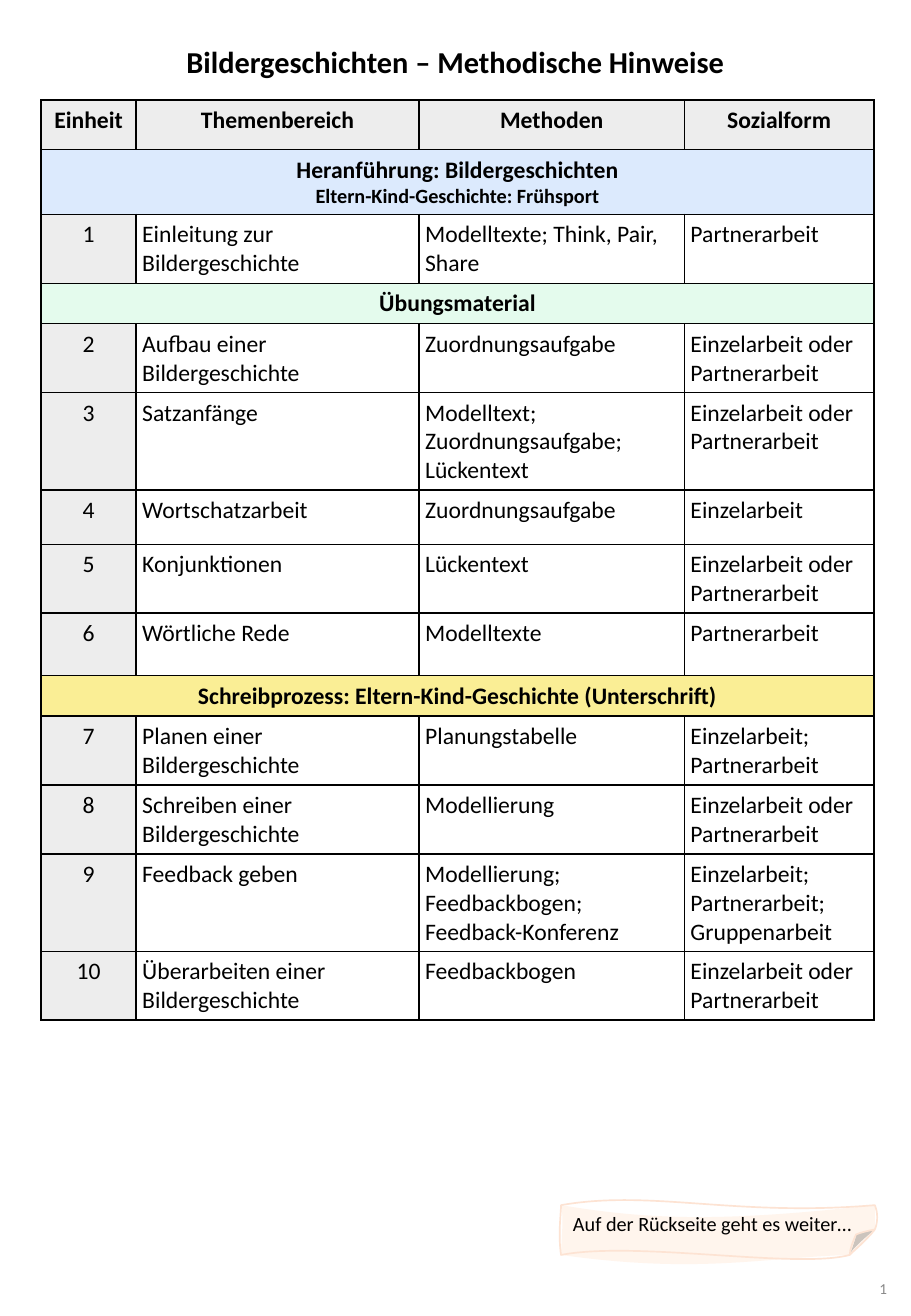
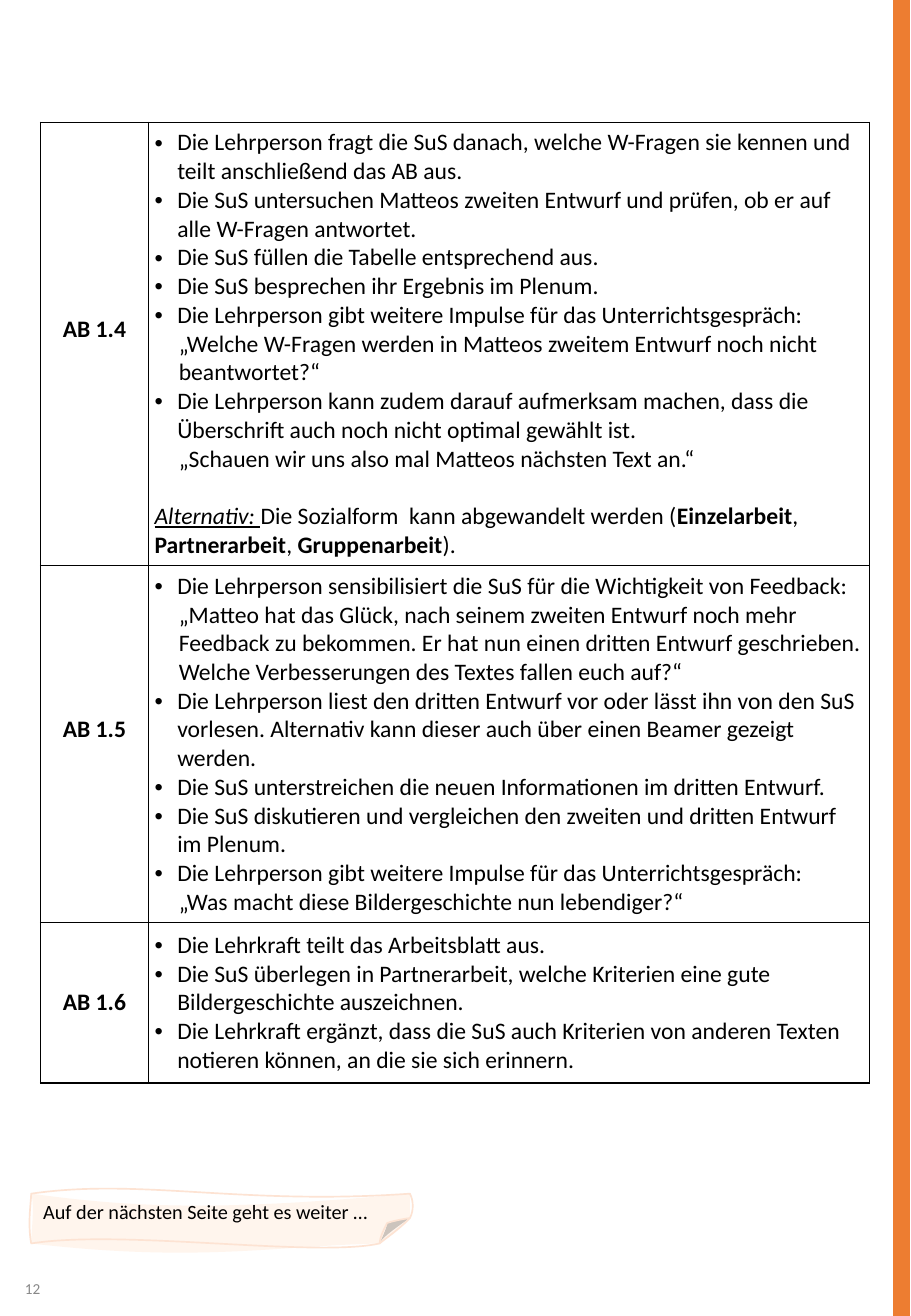
from pptx import Presentation
from pptx import util as u
from pptx.dml import color
from pptx.enum import shapes, text
from pptx.oxml import ns
from lxml import etree

Pt = u.Pt
FONT = "Calibri"
BLACK, GREY, ORANGE = "000000", "888888", "ED7D31"
HEAD, BLUE, GREEN, YELLOW = "EDEDED", "DCEAFD", "E4FBED", "FAEE95"
PAPER, EDGE = "FFF5ED", "FDE3D3"
WIDE, HIGH, PAD = 540, 780, 3.6
LEFT, MID, RIGHT = text.PP_ALIGN.LEFT, text.PP_ALIGN.CENTER, text.PP_ALIGN.RIGHT
TOP, CENTRE = text.MSO_ANCHOR.TOP, text.MSO_ANCHOR.MIDDLE

# Paper note: start point, then curves, in percent of its box
BODY = [(0, 0),
        (30, 32, 54, 32, 100, 0), (100, 20, 100, 30, 100, 49),
        (98, 66, 94, 88, 92, 100), (64, 105, 44, 139, 0, 100),
        (0, 80, 1, 22, 0, 0)]
FLAP = [(92, 100),
        (93, 83, 94, 66, 94, 59), (95, 56, 97, 54, 100, 49),
        (98, 59, 92, 91, 92, 100)]
RIM = [(92, 100),
       (92, 90, 93, 73, 94, 59), (95, 56, 98, 51, 100, 49),
       (97, 73, 93, 93, 92, 100), (75, 129, 24, 71, 0, 100),
       (-1, 59, 0, 15, 0, 0), (29, -32, 55, 24, 100, 0),
       (101, 15, 101, 34, 100, 49)]

# Overview: a row is (height, cells) or (height, band colour, lines)
ONE, TWO, THREE = 24, 40.7, 57.2
BOTH = "Einzelarbeit oder Partnerarbeit"
UNITS = [
    (38, BLUE, ["Heranführung: Bildergeschichten", "Eltern-Kind-Geschichte: Frühsport"]),
    (TWO, ["Einleitung zur Bildergeschichte", "Modelltexte; Think, Pair, Share", "Partnerarbeit"]),
    (ONE, GREEN, ["Übungsmaterial"]),
    (TWO, ["Aufbau einer Bildergeschichte", "Zuordnungsaufgabe", BOTH]),
    (THREE, ["Satzanfänge", "Modelltext; Zuordnungsaufgabe; Lückentext", BOTH]),
    (32.2, ["Wortschatzarbeit", "Zuordnungsaufgabe", "Einzelarbeit"]),
    (TWO, ["Konjunktionen", "Lückentext", BOTH]),
    (37, ["Wörtliche Rede", "Modelltexte", "Partnerarbeit"]),
    (ONE, YELLOW, ["Schreibprozess: Eltern-Kind-Geschichte (Unterschrift)"]),
    (TWO, ["Planen einer Bildergeschichte", "Planungstabelle", "Einzelarbeit; Partnerarbeit"]),
    (TWO, ["Schreiben einer Bildergeschichte", "Modellierung", BOTH]),
    (THREE, ["Feedback geben", "Modellierung; Feedbackbogen; Feedback-Konferenz",
             "Einzelarbeit;\nPartnerarbeit;\nGruppenarbeit"]),
    (TWO, ["Überarbeiten einer Bildergeschichte", "Feedbackbogen", BOTH]),
]

# Lesson steps: name, height, space below the name, lines
# "„" opens a quote, a list holds mixed runs, the rest are bullets
IMPULSE = "Die Lehrperson gibt weitere Impulse für das Unterrichtsgespräch:"
STEPS = [
    ("AB 1.4", 262.8, 17, [
        "Die Lehrperson fragt die SuS danach, welche W-Fragen sie kennen und teilt anschließend das AB aus.",
        "Die SuS untersuchen Matteos zweiten Entwurf und prüfen, ob er auf alle W-Fragen antwortet.",
        "Die SuS füllen die Tabelle entsprechend aus.",
        "Die SuS besprechen ihr Ergebnis im Plenum.",
        IMPULSE,
        "„Welche W-Fragen werden in Matteos zweitem Entwurf noch nicht beantwortet?“",
        "Die Lehrperson kann zudem darauf aufmerksam machen, dass die Überschrift auch noch "
        "nicht optimal gewählt ist.",
        "„Schauen wir uns also mal Matteos nächsten Text an.“",
        [("Alternativ: ", "iu"), ("Die Sozialform  kann abgewandelt werden (", ""),
         ("Einzelarbeit", "b"), (", ", ""), ("Partnerarbeit", "b"), (", ", ""),
         ("Gruppenarbeit", "b"), (").", "")],
    ]),
    ("AB 1.5", 211.6, 17, [
        "Die Lehrperson sensibilisiert die SuS für die Wichtigkeit von Feedback:",
        "„Matteo hat das Glück, nach seinem zweiten Entwurf noch mehr Feedback zu bekommen. "
        "Er hat nun einen dritten Entwurf geschrieben. Welche Verbesserungen des Textes fallen euch auf?“",
        "Die Lehrperson liest den dritten Entwurf vor oder lässt ihn von den SuS vorlesen. "
        "Alternativ kann dieser auch über einen Beamer gezeigt werden.",
        "Die SuS unterstreichen die neuen Informationen im dritten Entwurf.",
        "Die SuS diskutieren und vergleichen den zweiten und dritten Entwurf im Plenum.",
        IMPULSE,
        "„Was macht diese Bildergeschichte nun lebendiger?“",
    ]),
    ("AB 1.6", 95, 0, [
        "Die Lehrkraft teilt das Arbeitsblatt aus.",
        "Die SuS überlegen in Partnerarbeit, welche Kriterien eine gute Bildergeschichte auszeichnen.",
        "Die Lehrkraft ergänzt, dass die SuS auch Kriterien von anderen Texten notieren können, "
        "an die sie sich erinnern.",
    ]),
]


def rgb(code):
    return color.RGBColor.from_string(code)


def style(para, size=14, bold=False, ink=BLACK, align=LEFT):
    para.alignment = align
    font = para.font
    font.name, font.size, font.bold = FONT, Pt(size), bold
    font.color.rgb = rgb(ink)


def paras(frame, count):
    return [frame.paragraphs[0]] + [frame.add_paragraph() for _ in range(count - 1)]


def fill(item, code=None):
    if code:
        item.fill.solid()
        item.fill.fore_color.rgb = rgb(code)
    else:
        item.fill.background()


def label(slide, box, words, wrap=True, anchor=TOP, **look):
    frame = slide.shapes.add_textbox(*map(Pt, box)).text_frame
    frame.word_wrap, frame.vertical_anchor = wrap, anchor
    frame.auto_size = text.MSO_AUTO_SIZE.SHAPE_TO_FIT_TEXT
    frame.margin_left = frame.margin_right = Pt(PAD)
    frame.margin_top = frame.margin_bottom = Pt(PAD)
    frame.text = words
    style(frame.paragraphs[0], **look)


def folio(slide, left, number):
    label(slide, (left, 754.5, 17.5, 18), number, wrap=False, anchor=CENTRE,
          size=9, ink=GREY, align=RIGHT)


# Tables
def grid(slide, left, top, cols, rows):
    table = slide.shapes.add_table(len(rows), len(cols), Pt(left), Pt(top),
                                   Pt(sum(cols)), Pt(sum(rows))).table
    table.first_row = table.horz_banding = False
    for col, wide in zip(table.columns, cols):
        col.width = Pt(wide)
    for row, high in zip(table.rows, rows):
        row.height = Pt(high)
    for cell in table.iter_cells():
        cell.margin_left = cell.margin_right = Pt(PAD)
        cell.margin_top = cell.margin_bottom = Pt(PAD)
        props = cell._tc.get_or_add_tcPr()
        for side in "LRTB":
            line = etree.SubElement(props, ns.qn("a:ln" + side), w=str(Pt(1)))
            tint = etree.SubElement(line, ns.qn("a:solidFill"))
            etree.SubElement(tint, ns.qn("a:srgbClr"), val=BLACK)
        fill(cell)
    return table


def write(cell, words, **look):
    cell.text = words
    for para in cell.text_frame.paragraphs:
        style(para, **look)


def plan(slide, left, top):
    rows = [29.4] + [unit[0] for unit in UNITS]
    table = grid(slide, left, top, (56.3, 167.7, 157.3, 112.3), rows)
    for col, name in enumerate(("Einheit", "Themenbereich", "Methoden", "Sozialform")):
        write(table.cell(0, col), name, bold=True, align=MID)
        fill(table.cell(0, col), HEAD)
    count = 0
    for row, (_, *unit) in enumerate(UNITS, 1):
        first = table.cell(row, 0)
        if len(unit) == 2:
            band, lines = unit
            first.merge(table.cell(row, 3))
            write(first, "\n".join(lines), bold=True, align=MID)
            for para in first.text_frame.paragraphs[1:]:
                para.font.size = Pt(12)
            fill(first, band)
            continue
        count += 1
        write(first, str(count), align=MID)
        fill(first, HEAD)
        for col, words in enumerate(unit[0], 1):
            write(table.cell(row, col), words)


def indent(para, left, bullet=False):
    props = para._p.get_or_add_pPr()
    props.set("marL", str(Pt(left)))
    props.set("indent", str(Pt(-left if bullet else 0)))
    if bullet:
        etree.SubElement(props, ns.qn("a:buFont"), typeface="Arial")
        etree.SubElement(props, ns.qn("a:buChar"), char="•")
        # Default run properties belong after the bullet
        props.append(props.find(ns.qn("a:defRPr")))


def steps(slide, left, top):
    table = grid(slide, left, top, (64, 427.5), [step[1] for step in STEPS])
    for row, (name, _, below, lines) in enumerate(STEPS):
        head, body = table.cell(row, 0), table.cell(row, 1)
        head.vertical_anchor = body.vertical_anchor = CENTRE
        head.margin_bottom = Pt(PAD + below)
        write(head, name, bold=True, align=MID)
        for para, line in zip(paras(body.text_frame, len(lines)), lines):
            style(para)
            if isinstance(line, list):
                para.space_before = Pt(17)
                for words, marks in line:
                    run = para.add_run()
                    run.text = words
                    run.font.bold = "b" in marks
                    run.font.italic = "i" in marks
                    run.font.underline = "u" in marks
            else:
                para.text = line
                quote = line.startswith("„")
                indent(para, 14.4 if quote else 13.5, not quote)


# Paper note
def trace(paths, curves, closed=True, **paint):
    path = etree.SubElement(paths, ns.qn("a:path"), w="100", h="100", **paint)
    for tag, spots in zip(["moveTo"] + ["cubicBezTo"] * len(curves), curves):
        step = etree.SubElement(path, ns.qn("a:" + tag))
        for x, y in zip(spots[::2], spots[1::2]):
            etree.SubElement(step, ns.qn("a:pt"), x=str(x), y=str(y))
    if closed:
        etree.SubElement(path, ns.qn("a:close"))


def note(slide, box, words):
    left, top, wide, high = map(Pt, box)
    pen = slide.shapes.build_freeform(left, top)
    pen.add_line_segments([(left + wide, top), (left + wide, top + high), (left, top + high)])
    shape = pen.convert_to_shape()
    # Curved outlines replace the straight one
    paths = shape._element.spPr.find(".//" + ns.qn("a:pathLst"))
    paths.remove(paths[0])
    trace(paths, BODY, stroke="0")
    trace(paths, FLAP, stroke="0", fill="darkenLess")
    trace(paths, RIM, closed=False, fill="none")
    shape.shadow.inherit = False
    fill(shape, PAPER)
    shape.line.color.rgb = rgb(EDGE)
    shape.line.width = Pt(1)
    frame = shape.text_frame
    frame.word_wrap, frame.vertical_anchor = True, TOP
    frame.text = words
    style(frame.paragraphs[0], size=12)


def stripe(slide, x):
    line = slide.shapes.add_connector(shapes.MSO_CONNECTOR.STRAIGHT, Pt(x), 0, Pt(x), Pt(HIGH))
    line.line.color.rgb = rgb(ORANGE)
    line.line.width = Pt(10)
    etree.SubElement(line._element.spPr, ns.qn("a:effectLst"))


def main():
    deck = Presentation()
    deck.slide_width, deck.slide_height = Pt(WIDE), Pt(HIGH)
    first, second = (deck.slides.add_slide(deck.slide_layouts[6]) for _ in range(2))

    # Overview
    label(first, (2, 21.8, 536, 29), "Bildergeschichten – Methodische Hinweise",
          size=18, bold=True, align=MID)
    plan(first, 24.4, 59.2)
    note(first, (332.6, 714.3, 186, 29.5), "Auf der Rückseite geht es weiter…")
    folio(first, 512, "1")

    # Lesson steps
    steps(second, 24, 72.5)
    stripe(second, 534.5)
    folio(second, 10, "12")
    note(second, (18.5, 707.5, 224.5, 29.5), "Auf der nächsten Seite geht es weiter …")
    deck.save("out.pptx")


if __name__ == "__main__":
    main()
